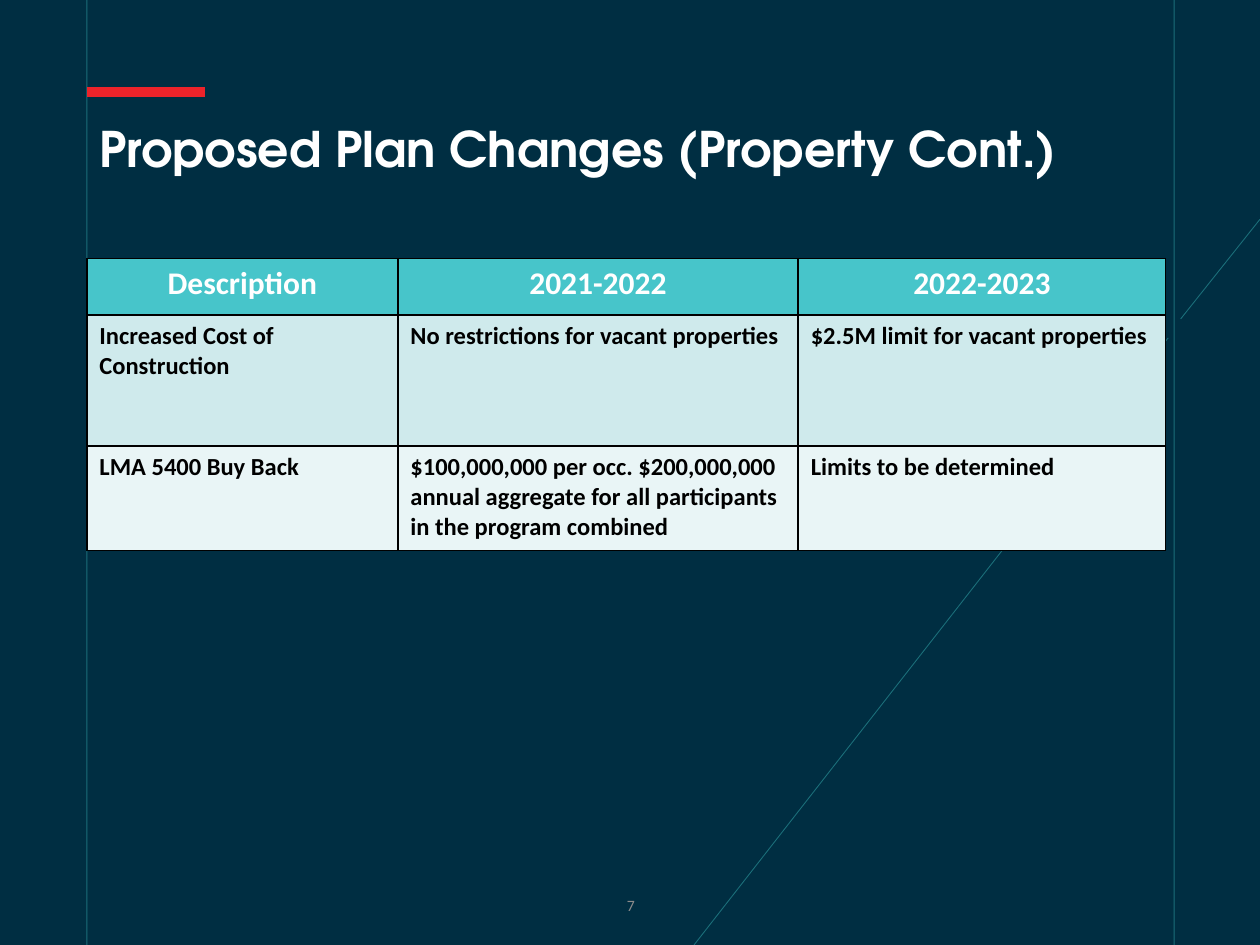
import dataclasses

import lxml.etree
import pptx
import pptx.dml.color
import pptx.enum.shapes
import pptx.enum.text
import pptx.oxml.ns
import pptx.util

Cm = pptx.util.Cm
Pt = pptx.util.Pt
ALIGN = pptx.enum.text.PP_ALIGN
ANCHOR = pptx.enum.text.MSO_ANCHOR
qn = pptx.oxml.ns.qn


@dataclasses.dataclass(frozen=True)
class Theme:
    background: str = "002E42"
    guide: str = "2E9B9F"
    accent: str = "EC232A"
    white: str = "FFFFFF"
    black: str = "000000"
    muted: str = "8C8C8C"
    header: str = "47C5CA"
    bands: tuple = ("CFEAEC", "E9F5F6")
    title_font: str = "TeX Gyre Adventor"
    body_font: str = "Calibri"
    title_size: int = 28
    header_size: int = 18
    body_size: int = 14
    number_size: int = 9


def rgb(value):
    return pptx.dml.color.RGBColor.from_string(value)


class SlideBuilder:
    def __init__(self, slide, theme):
        self.slide = slide
        self.theme = theme
        fill = slide.background.fill
        fill.solid()
        fill.fore_color.rgb = rgb(theme.background)

    def line(self, start, end, color, width, opacity=100):
        points = [Cm(value) for value in (*start, *end)]
        connector = self.slide.shapes.add_connector(
            pptx.enum.shapes.MSO_CONNECTOR.STRAIGHT, *points)
        connector.line.color.rgb = rgb(color)
        connector.line.width = Pt(width)
        properties = connector._element.spPr
        if opacity < 100:
            paint = properties.find(".//" + qn("a:srgbClr"))
            lxml.etree.SubElement(paint, qn("a:alpha"), val=str(opacity * 1000))
        lxml.etree.SubElement(properties, qn("a:effectLst"))

    def style(self, para, size, color, font, bold, align):
        para.alignment = align
        for span in para.runs:
            span.font.size = Pt(size)
            span.font.name = font
            span.font.bold = bold
            span.font.color.rgb = rgb(color)

    def text(self, text, place, size, color, font, bold=False,
             align=ALIGN.LEFT, anchor=ANCHOR.TOP, spacing=1.0):
        box = self.slide.shapes.add_textbox(*[Cm(value) for value in place])
        frame = box.text_frame
        frame.word_wrap = True
        frame.vertical_anchor = anchor
        frame.text = text
        para = frame.paragraphs[0]
        para.line_spacing = spacing
        self.style(para, size, color, font, bold, align)

    def border(self, cell):
        properties = cell._tc.get_or_add_tcPr()
        for index, side in enumerate(("lnL", "lnR", "lnT", "lnB")):
            edge = lxml.etree.Element(qn("a:" + side), w=str(Pt(1)))
            fill = lxml.etree.SubElement(edge, qn("a:solidFill"))
            lxml.etree.SubElement(fill, qn("a:srgbClr"), val=self.theme.black)
            properties.insert(index, edge)

    def table(self, rows, left, top, widths, heights):
        theme = self.theme
        frame = self.slide.shapes.add_table(
            len(rows), len(widths), Cm(left), Cm(top),
            Cm(sum(widths)), Cm(sum(heights)))
        table = frame.table
        for column, width in zip(table.columns, widths):
            column.width = Cm(width)
        for index, (row, height, texts) in enumerate(zip(table.rows, heights, rows)):
            row.height = Cm(height)
            if index == 0:
                fill, color, size, align = (
                    theme.header, theme.white, theme.header_size, ALIGN.CENTER)
            else:
                fill = theme.bands[(index - 1) % len(theme.bands)]
                color, size, align = theme.black, theme.body_size, ALIGN.LEFT
            for cell, text in zip(row.cells, texts):
                cell.fill.solid()
                cell.fill.fore_color.rgb = rgb(fill)
                self.border(cell)
                cell.text_frame.text = text
                self.style(cell.text_frame.paragraphs[0], size, color,
                           theme.body_font, True, align)


def main():
    deck = pptx.Presentation()
    deck.slide_width = Cm(25.4)
    deck.slide_height = Cm(19.05)
    theme = Theme()
    page = SlideBuilder(deck.slides.add_slide(deck.slide_layouts[6]), theme)

    left = 1.75
    guides = [
        ((23.55, 6.81), (13.99, 19.05)),
        ((left, 0), (left, 19.05)),
        ((23.67, 0), (23.67, 19.05)),
        ((25.4, 4.42), (23.8, 6.43)),
    ]
    for start, end in guides:
        page.line(start, end, theme.guide, 0.5, opacity=60)
    page.line((left, 1.85), (4.14, 1.85), theme.accent, 6)

    page.text("7", (9.86, 17.73, 5.72, 1.02), theme.number_size, theme.muted,
              theme.body_font, align=ALIGN.CENTER, anchor=ANCHOR.MIDDLE)
    page.text("Proposed Plan Changes (Property Cont.)", (left, 2.39, 20.65, 2.08),
              theme.title_size, theme.white, theme.title_font, bold=True, spacing=0.9)

    rows = [
        ("Description", "2021-2022", "2022-2023"),
        ("Increased Cost of Construction",
         "No restrictions for vacant properties",
         "$2.5M limit for vacant properties"),
        ("LMA 5400 Buy Back",
         "$100,000,000 per occ. $200,000,000 annual aggregate "
         "for all participants in the program combined",
         "Limits to be determined"),
    ]
    page.table(rows, left, 5.21, (6.27, 8.07, 7.41), (1.14, 2.64, 2.11))
    deck.save("out.pptx")


if __name__ == "__main__":
    main()
